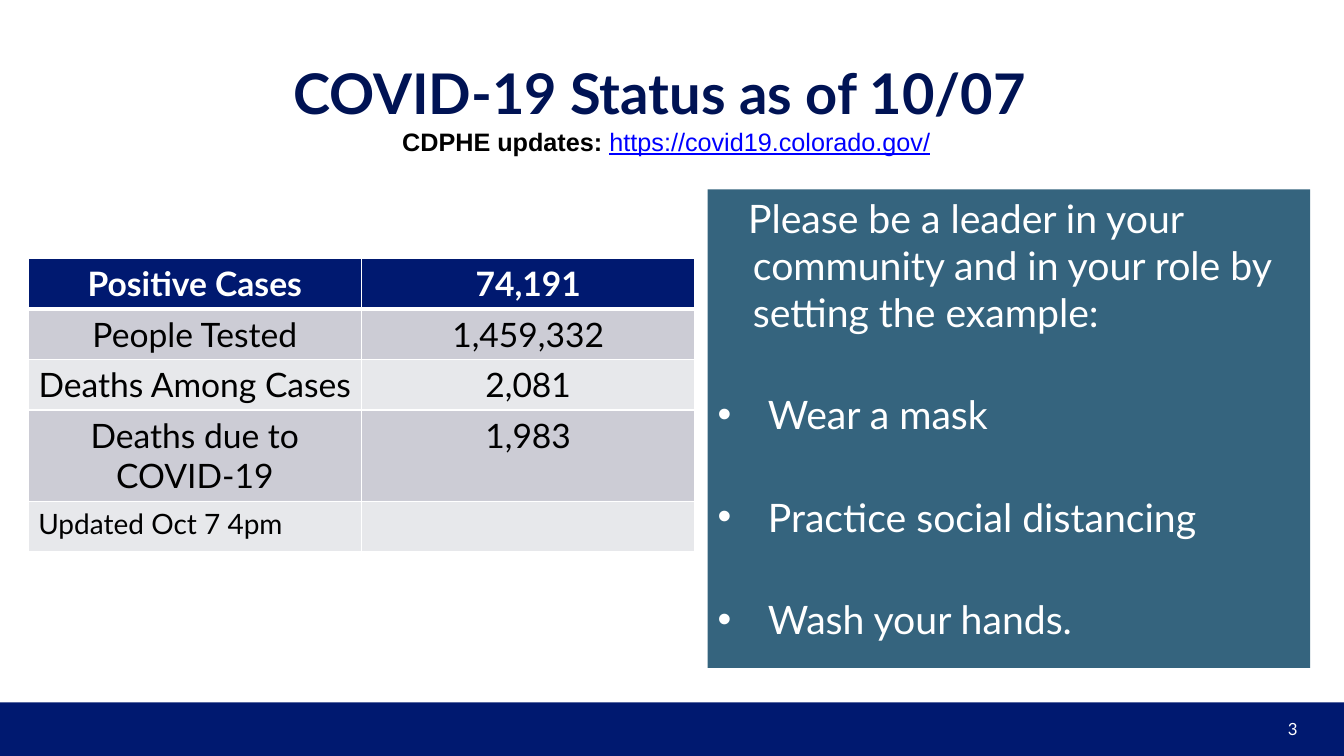
from lxml import etree
from pptx import Presentation
from pptx.dml.color import RGBColor
from pptx.enum.shapes import MSO_SHAPE
from pptx.enum.text import MSO_ANCHOR, MSO_AUTO_SIZE, PP_ALIGN
from pptx.oxml.ns import qn
from pptx.util import Cm, Pt

RECT = MSO_SHAPE.RECTANGLE
MIDDLE, TOP = MSO_ANCHOR.MIDDLE, MSO_ANCHOR.TOP
FIXED = MSO_AUTO_SIZE.NONE
LEFT, CENTER, RIGHT = PP_ALIGN.LEFT, PP_ALIGN.CENTER, PP_ALIGN.RIGHT

COLORS = {
    "white": "FFFFFF", "black": "000000", "navy": "001970", "title": "001354",
    "link": "0000FF", "teal": "35647E", "dark": "CCCCD5", "light": "E7E8EB",
}


def write(par, text, font="Lato", size=24, color="black", bold=False, line=False, align=CENTER):
    par.alignment = align
    run = par.add_run()
    run.text = text
    run.font.name = font
    run.font.size = Pt(size)
    run.font.bold = bold
    run.font.underline = line
    run.font.color.rgb = RGBColor.from_string(COLORS[color])


def paint(fill, color):
    fill.solid()
    fill.fore_color.rgb = RGBColor.from_string(COLORS[color])


deck = Presentation()
deck.slide_width, deck.slide_height = Cm(33.87), Cm(19.05)
slide = deck.slides.add_slide(deck.slide_layouts[1])
title, body = slide.placeholders

bar = slide.shapes.add_shape(RECT, 0, Cm(17.7), deck.slide_width, Cm(1.35))
bar.shadow.inherit = False
paint(bar.fill, "navy")
bar.line.fill.background()

title.left, title.top, title.width, title.height = Cm(0.71), Cm(0.97), Cm(32.16), Cm(3.48)
frame = title.text_frame
frame.auto_size = FIXED
frame.vertical_anchor = MIDDLE
frame.margin_left = frame.margin_right = frame.margin_top = frame.margin_bottom = 0
head = frame.paragraphs[0]
write(head, "COVID-19 Status as of 10/07 ", size=40, color="title", bold=True)
head.add_line_break()
write(head, "CDPHE updates: ", font="Arial", size=18, bold=True)
write(head, "https://covid19.colorado.gov/", font="Arial", size=18, color="link", line=True)

rows = [
    ("Positive Cases", "74,191"),
    ("People Tested", "1,459,332"),
    ("Deaths Among Cases", "2,081"),
    ("Deaths due to COVID-19", "1,983"),
    ("Updated Oct 7 4pm", ""),
]
heights = [1.26, 1.26, 1.26, 2.3, 1.26]
table = slide.shapes.add_table(5, 2, Cm(0.71), Cm(6.52), Cm(16.8), Cm(sum(heights))).table
table.horz_banding = False
for r, row in enumerate(rows):
    table.rows[r].height = Cm(heights[r])
    for c, text in enumerate(row):
        cell = table.cell(r, c)
        paint(cell.fill, "navy" if r == 0 else "dark" if r % 2 else "light")
        props = cell._tc.get_or_add_tcPr()
        for i, side in enumerate(["lnL", "lnR", "lnT", "lnB"]):
            thick = (r, side) in [(0, "lnB"), (1, "lnT")]
            edge = etree.Element(qn("a:" + side), w=str(Pt(3 if thick else 1)))
            fill = etree.SubElement(edge, qn("a:solidFill"))
            etree.SubElement(fill, qn("a:srgbClr"), val=COLORS["white"])
            props.insert(i, edge)
        if text:
            last = r == len(rows) - 1
            write(cell.text_frame.paragraphs[0], text, size=20 if last else 24,
                  color="black" if r else "white", bold=r == 0,
                  align=LEFT if last else CENTER)

body.left, body.top, body.width, body.height = Cm(17.83), Cm(4.77), Cm(15.19), Cm(12.06)
paint(body.fill, "teal")
frame = body.text_frame
frame.auto_size = FIXED
frame.vertical_anchor = TOP
frame.word_wrap = True
advice = [
    "Please be a leader in your community and in your role by setting the example:",
    "Wear a mask",
    "Practice social distancing",
    "Wash your hands.",
]
for i, text in enumerate(advice):
    par = frame.add_paragraph() if i else frame.paragraphs[0]
    props = par._p.get_or_add_pPr()
    props.set("marL", str(Cm(1.27 if i else 0.89)))
    props.set("indent", str(Cm(-1.27 if i else -0.12)))
    if i:
        etree.SubElement(props, qn("a:buFont"), typeface="Arial")
        etree.SubElement(props, qn("a:buChar"), char="•")
    else:
        etree.SubElement(props, qn("a:buNone"))
    par.space_before = Pt(39.4 if i else 0)
    write(par, text, size=28, color="white", align=LEFT)

page = slide.shapes.add_textbox(Cm(27.36), Cm(17.86), Cm(5.59), Cm(1.02))
page.text_frame.word_wrap = True
page.text_frame.vertical_anchor = MIDDLE
write(page.text_frame.paragraphs[0], "3", size=12, color="white", align=RIGHT)

deck.save("out.pptx")
